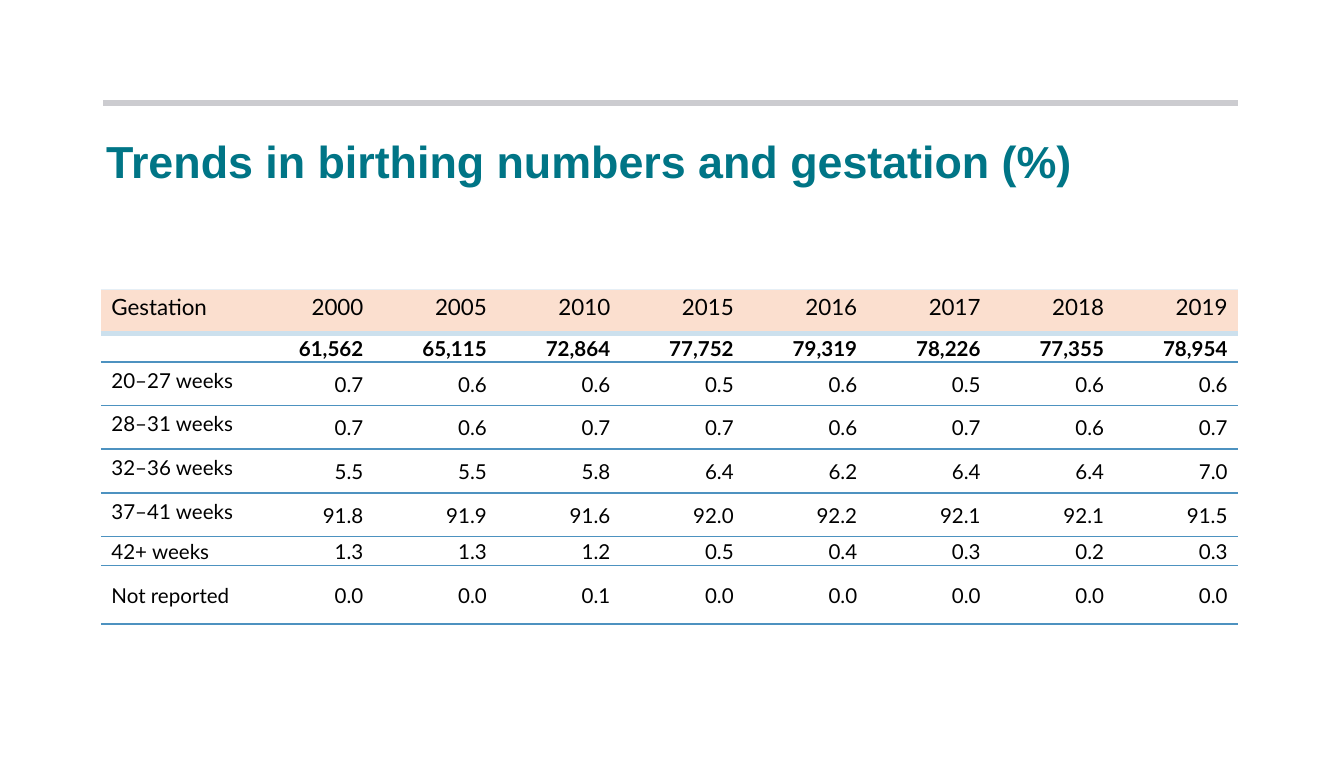
from dataclasses import dataclass

from lxml.etree import SubElement
from pptx import Presentation
from pptx.dml.color import RGBColor
from pptx.enum.shapes import MSO_CONNECTOR
from pptx.enum.text import MSO_ANCHOR as Anchor, PP_ALIGN as Align
from pptx.oxml import parse_xml
from pptx.oxml.ns import nsdecls, qn
from pptx.util import Pt

TEAL = RGBColor(0x00, 0x75, 0x86)
GREY = RGBColor(0xCC, 0xCC, 0xD0)
BLACK = RGBColor(0x00, 0x00, 0x00)
PEACH = RGBColor(0xFB, 0xDF, 0xCF)
PALE_BLUE = RGBColor(0xE6, 0xEF, 0xF6)
LIGHT_BLUE = RGBColor(0xCC, 0xE0, 0xED)
BLUE = RGBColor(0x4D, 0x92, 0xC0)
NO_STYLE = "{2D5ABB26-0587-4C30-8999-92F81FD0307C}"


@dataclass(frozen=True)
class Border:
    color: RGBColor
    width: float


THIN = Border(BLUE, 1)
HEADER_TOP = Border(PALE_BLUE, 1)
HEADER_RULE = Border(LIGHT_BLUE, 3)


@dataclass(frozen=True)
class Row:
    label: str
    values: str
    height: float = 23.4
    label_spacing: float = 14
    spacing: float = 14
    size: float = 11
    bold: bool = False
    header: bool = False
    top: Border = THIN
    bottom: Border = THIN


ROWS = [
    Row("Gestation", "2000 2005 2010 2015 2016 2017 2018 2019", 23.4, 13, 13,
        size=12, header=True, top=HEADER_TOP, bottom=HEADER_RULE),
    Row("", "61,562 65,115 72,864 77,752 79,319 78,226 77,355 78,954", 15.4,
        bold=True, top=HEADER_RULE),
    Row("20–27 weeks", "0.7 0.6 0.6 0.5 0.6 0.5 0.6 0.6", label_spacing=9.6),
    Row("28–31 weeks", "0.7 0.6 0.7 0.7 0.6 0.7 0.6 0.7", label_spacing=9.6),
    Row("32–36 weeks", "5.5 5.5 5.8 6.4 6.2 6.4 6.4 7.0", label_spacing=9.6),
    Row("37–41 weeks", "91.8 91.9 91.6 92.0 92.2 92.1 92.1 91.5", label_spacing=9.6),
    Row("42+ weeks", "1.3 1.3 1.2 0.5 0.4 0.3 0.2 0.3", 15.4),
    Row("Not reported", "0.0 0.0 0.1 0.0 0.0 0.0 0.0 0.0", 31.6),
]
COLUMNS = [88, 58.4] + [66.15] * 7


def set_border(cell, tag: str, border: Border, index: int) -> None:
    ln = parse_xml(
        f'<a:{tag} {nsdecls("a")} w="{Pt(border.width)}"><a:solidFill>'
        f'<a:srgbClr val="{border.color}"/></a:solidFill></a:{tag}>')
    cell._tc.get_or_add_tcPr().insert(index, ln)


def fill_cell(cell, row: Row, text: str, is_label: bool) -> None:
    cell.margin_left = cell.margin_right = Pt(5.67)
    cell.margin_top = cell.margin_bottom = Pt(3.6 if row.header else 0)
    cell.vertical_anchor = Anchor.TOP if row.header else Anchor.MIDDLE
    if row.header:
        cell.fill.solid()
        cell.fill.fore_color.rgb = PEACH
    else:
        cell.fill.background()
    set_border(cell, "lnT", row.top, 0)
    set_border(cell, "lnB", row.bottom, 1)

    p = cell.text_frame.paragraphs[0]
    if not text:
        # An empty cell needs its own text size to keep the row low
        SubElement(p._p, qn("a:endParaRPr"), sz=str(int(row.size * 100)))
        return
    p.text = text
    p.alignment = Align.LEFT if is_label else Align.RIGHT
    p.line_spacing = Pt(row.label_spacing if is_label else row.spacing)
    if not row.header:
        p.space_after = Pt(2)
    style_font(p.runs[0].font, "Lato", row.size, BLACK, row.bold)


def style_font(font, name: str, size: float, color: RGBColor, bold: bool) -> None:
    font.name, font.size, font.bold = name, Pt(size), bold
    font.color.rgb = color


def add_rule(s) -> None:
    line = s.shapes.add_connector(
        MSO_CONNECTOR.STRAIGHT, Pt(55.4), Pt(55.2), Pt(663.1), Pt(55.2))
    line.line.color.rgb = GREY
    line.line.width = Pt(3)
    SubElement(line._element.spPr, qn("a:effectLst"))


def add_title(s, text: str) -> None:
    tf = s.shapes.add_textbox(Pt(54), Pt(70.6), Pt(609), Pt(51)).text_frame
    tf.word_wrap = True
    tf.margin_left = tf.margin_right = tf.margin_top = tf.margin_bottom = Pt(2.9)
    p = tf.paragraphs[0]
    p.text = text
    p.line_spacing = 0.95
    p.space_after = Pt(6)
    style_font(p.runs[0].font, "Arial", 24, TEAL, True)


def add_gestation_table(s) -> None:
    height = sum(row.height for row in ROWS)
    frame = s.shapes.add_table(
        len(ROWS), len(COLUMNS), Pt(54), Pt(155), Pt(sum(COLUMNS)), Pt(height))
    table = frame.table
    table.horz_banding = False
    table._tbl.tblPr.find(qn("a:tableStyleId")).text = NO_STYLE
    for column, width in zip(table.columns, COLUMNS):
        column.width = Pt(width)
    for i, row in enumerate(ROWS):
        table.rows[i].height = Pt(row.height)
        for j, text in enumerate([row.label, *row.values.split()]):
            fill_cell(table.cell(i, j), row, text, is_label=j == 0)


def main() -> None:
    prs = Presentation()
    prs.slide_width, prs.slide_height = Pt(720), Pt(405.36)
    s = prs.slides.add_slide(prs.slide_layouts[6])

    # Heading
    add_rule(s)
    add_title(s, "Trends in birthing numbers and gestation (%)")

    # Births by year and gestation
    add_gestation_table(s)

    prs.save("out.pptx")


if __name__ == "__main__":
    main()
